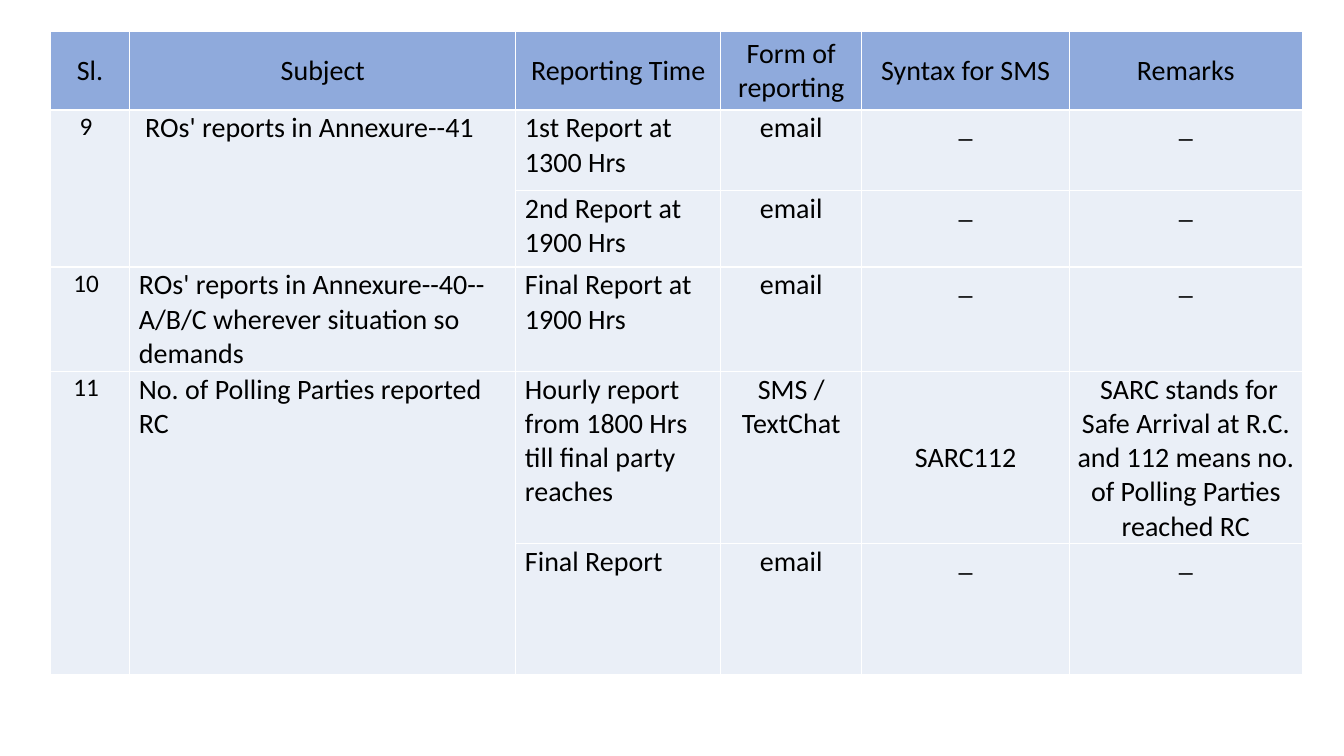
"""Build a slide with the polling report schedule, items 9 to 11."""
import lxml.etree
import pptx
import pptx.dml.color
import pptx.enum.text
import pptx.oxml.ns
import pptx.util

Cm = pptx.util.Cm
ALIGN = pptx.enum.text.PP_ALIGN
ANCHOR = pptx.enum.text.MSO_ANCHOR

HEADINGS = ["Sl.", "Subject", "Reporting Time", "Form of reporting", "Syntax for SMS", "Remarks"]
ITEMS = [
    ("9", " ROs' reports in Annexure--41", [
        ("1st Report at 1300 Hrs", "email", "_", "_"),
        ("2nd Report at 1900 Hrs", "email", "_", "_"),
    ]),
    ("10", "ROs' reports in Annexure--40--A/B/C wherever situation so demands", [
        ("Final Report at 1900 Hrs", "email", "_", "_"),
    ]),
    ("11", "No. of Polling Parties reported RC", [
        ("Hourly report from 1800 Hrs till final party reaches", "SMS / TextChat", "SARC112",
         " SARC stands for Safe Arrival at R.C. and 112 means no. of Polling Parties reached RC"),
        ("Final Report", "email", "_", "_"),
    ]),
]
COLUMN_WIDTHS = [2, 9.73, 5.16, 3.56, 5.23, 5.87]
ROW_HEIGHTS = [1.98, 2.03, 1.93, 2.54, 4.25, 3.3]
TABLE_LEFT, TABLE_TOP = 1.27, 0.79
NARROW_INSET, WIDE_INSET = 0.03, 0.23

THEME = {
    "font": "Calibri", "text": "000000", "header": "8FAADC", "body": "EAEFF7",
    "border": "FFFFFF", "border_width": 1, "size": 20, "number_size": 18,
}


def rgb(name):
    return pptx.dml.color.RGBColor.from_string(THEME[name])


def add_borders(cell):
    properties = cell._tc.get_or_add_tcPr()
    for position, side in enumerate(("lnL", "lnR", "lnT", "lnB")):
        line = lxml.etree.Element(pptx.oxml.ns.qn(f"a:{side}"),
                                  w=str(pptx.util.Pt(THEME["border_width"])))
        fill = lxml.etree.SubElement(line, pptx.oxml.ns.qn("a:solidFill"))
        lxml.etree.SubElement(fill, pptx.oxml.ns.qn("a:srgbClr"), val=THEME["border"])
        properties.insert(position, line)


def write(cell, text, size="size", align=ALIGN.CENTER, anchor=ANCHOR.TOP,
          left=NARROW_INSET, right=NARROW_INSET):
    cell.margin_left, cell.margin_right = Cm(left), Cm(right)
    cell.margin_top, cell.margin_bottom = Cm(NARROW_INSET), 0
    cell.vertical_anchor = anchor
    paragraph = cell.text_frame.paragraphs[0]
    paragraph.alignment = align
    run = paragraph.add_run()
    run.text = text
    run.font.name = THEME["font"]
    run.font.size = pptx.util.Pt(THEME[size])
    run.font.bold = False
    run.font.color.rgb = rgb("text")


def main():
    deck = pptx.Presentation()
    deck.slide_width, deck.slide_height = Cm(33.87), Cm(19.05)
    slide = deck.slides.add_slide(deck.slide_layouts[6])
    schedule = slide.shapes.add_table(
        len(ROW_HEIGHTS), len(COLUMN_WIDTHS), Cm(TABLE_LEFT), Cm(TABLE_TOP),
        Cm(sum(COLUMN_WIDTHS)), Cm(sum(ROW_HEIGHTS))).table
    for column, width in zip(schedule.columns, COLUMN_WIDTHS):
        column.width = Cm(width)
    for index, height in enumerate(ROW_HEIGHTS):
        schedule.rows[index].height = Cm(height)
        for cell in schedule.rows[index].cells:
            cell.fill.solid()
            cell.fill.fore_color.rgb = rgb("body" if index else "header")
            add_borders(cell)

    for column, heading in enumerate(HEADINGS):
        write(schedule.cell(0, column), heading, anchor=ANCHOR.MIDDLE)

    first = 1
    for number, subject, reports in ITEMS:
        last = first + len(reports) - 1
        if last > first:
            for column in (0, 1):
                schedule.cell(first, column).merge(schedule.cell(last, column))
        write(schedule.cell(first, 0), number, size="number_size", right=WIDE_INSET)
        write(schedule.cell(first, 1), subject, align=ALIGN.LEFT, left=WIDE_INSET)
        for row, (time, form, syntax, remark) in enumerate(reports, first):
            write(schedule.cell(row, 2), time, align=ALIGN.LEFT, left=WIDE_INSET)
            write(schedule.cell(row, 3), form)
            for column, text in ((4, syntax), (5, remark)):
                write(schedule.cell(row, column), text,
                      anchor=ANCHOR.TOP if text == "_" else ANCHOR.MIDDLE)
        first = last + 1

    deck.save("out.pptx")


if __name__ == "__main__":
    main()
